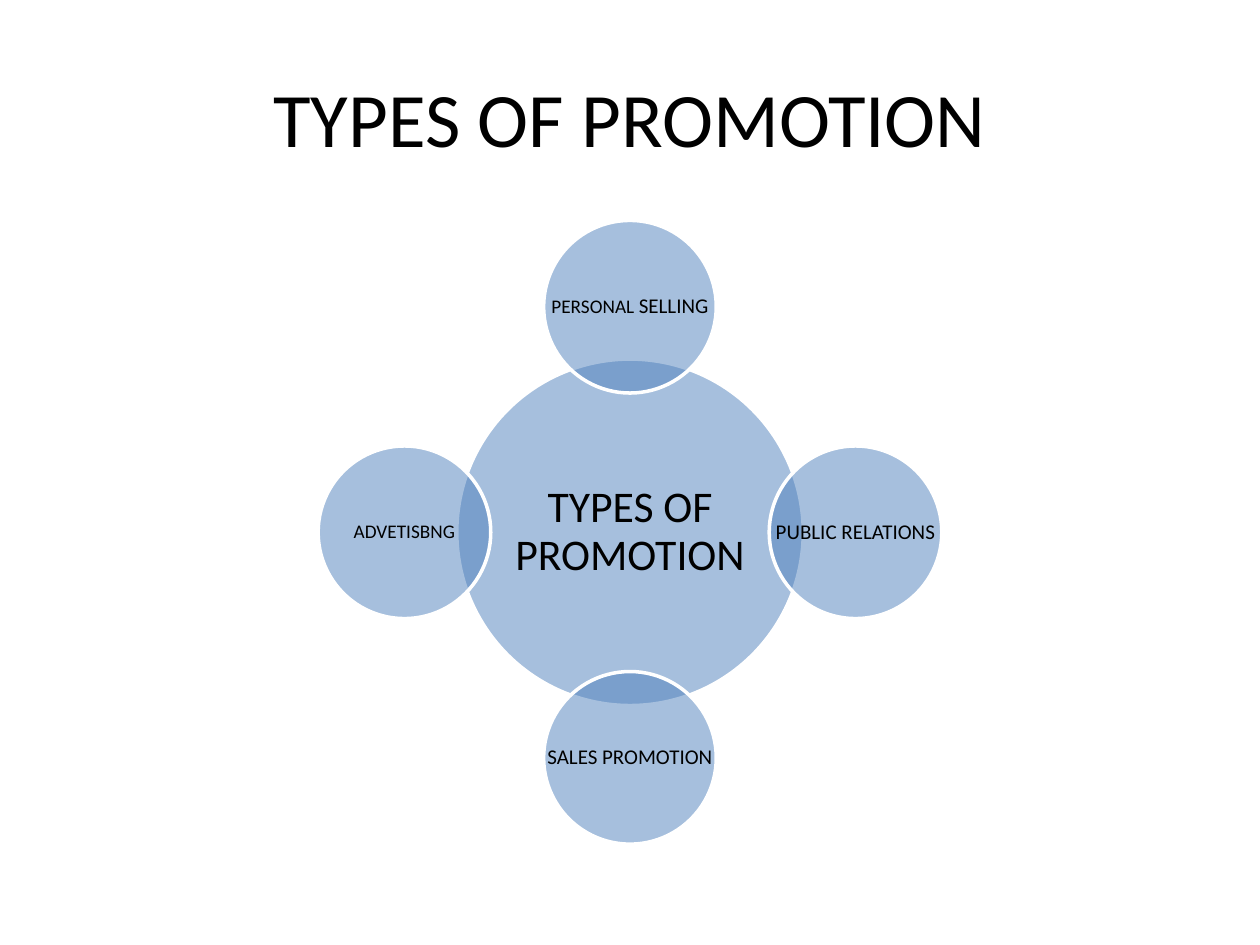
from math import cos, pi, sin

from lxml.etree import SubElement
from pptx import Presentation
from pptx.dml.color import RGBColor
from pptx.enum.shapes import MSO_SHAPE
from pptx.enum.text import MSO_ANCHOR, PP_ALIGN
from pptx.oxml.ns import qn
from pptx.util import Inches, Pt

COLORS = {"text": "000000", "circle": "4F81BD", "outline": "FFFFFF"}
FONT = "Calibri"
WIDTH, HEIGHT = 10, 7.5
HUB_CENTER = (0.5, 0.5633)  # shares of the slide's width and height
HUB_DIAMETER, SATELLITE_DIAMETER = 0.275, 0.137  # shares of the width
ORBIT = 0.179

# Clockwise from the top: (text, size) runs of each satellite
SATELLITES = [
    [("PERSONAL ", 11), ("SELLING", 12)],
    [("PUBLIC RELATIONS", 12)],
    [("SALES PROMOTION", 12)],
    [("ADVETISBNG", 11)],
]


def color(name):
    return RGBColor.from_string(COLORS[name])


def write_text(frame, runs, line_spacing=1.0, wrap=True, inset=None):
    """Fill a text frame with one centred paragraph of (text, size) runs."""
    frame.word_wrap = wrap
    frame.vertical_anchor = MSO_ANCHOR.MIDDLE
    if inset is not None:
        frame.margin_left = frame.margin_right = Inches(inset)
        frame.margin_top = frame.margin_bottom = Inches(inset)
    paragraph = frame.paragraphs[0]
    paragraph.alignment = PP_ALIGN.CENTER
    paragraph.line_spacing = line_spacing
    for text, size in runs:
        run = paragraph.add_run()
        run.text = text
        run.font.name = FONT
        run.font.size = Pt(size)
        run.font.color.rgb = color("text")


class DiagramSlide:
    def __init__(self, presentation):
        self.slide = presentation.slides.add_slide(presentation.slide_layouts[5])

    def title(self, text, left, top, width, height):
        shape = self.slide.shapes.title
        shape.left, shape.width = Inches(left * WIDTH), Inches(width * WIDTH)
        shape.top, shape.height = Inches(top * HEIGHT), Inches(height * HEIGHT)
        write_text(shape.text_frame, [(text, 44)])

    def circle(self, center, diameter, runs, wrap, inset):
        """Add a half-transparent circle with its label."""
        size = diameter * WIDTH
        shape = self.slide.shapes.add_shape(
            MSO_SHAPE.OVAL,
            Inches(center[0] * WIDTH - size / 2),
            Inches(center[1] * HEIGHT - size / 2),
            Inches(size), Inches(size))
        shape.shadow.inherit = False
        shape.fill.solid()
        shape.fill.fore_color.rgb = color("circle")
        fill_color = shape.fill._xPr.find(qn("a:solidFill"))[0]
        SubElement(fill_color, qn("a:alpha"), val="50000")
        shape.line.color.rgb = color("outline")
        shape.line.width = Pt(2)
        write_text(shape.text_frame, runs, line_spacing=0.9, wrap=wrap, inset=inset)

    def radial_diagram(self, hub_text, satellites):
        self.circle(HUB_CENTER, HUB_DIAMETER, [(hub_text, 25)], wrap=True, inset=0.03)
        for index, runs in enumerate(satellites):
            angle = 2 * pi * index / len(satellites)
            center = (HUB_CENTER[0] + ORBIT * sin(angle),
                      HUB_CENTER[1] - ORBIT * cos(angle) * WIDTH / HEIGHT)
            self.circle(center, SATELLITE_DIAMETER, runs, wrap=False, inset=0.02)


def main():
    presentation = Presentation()
    presentation.slide_width, presentation.slide_height = Inches(WIDTH), Inches(HEIGHT)
    slide = DiagramSlide(presentation)
    slide.title("TYPES OF PROMOTION", left=0.05, top=0.04, width=0.9, height=1 / 6)
    slide.radial_diagram("TYPES OF PROMOTION", SATELLITES)
    presentation.save("out.pptx")


if __name__ == "__main__":
    main()
